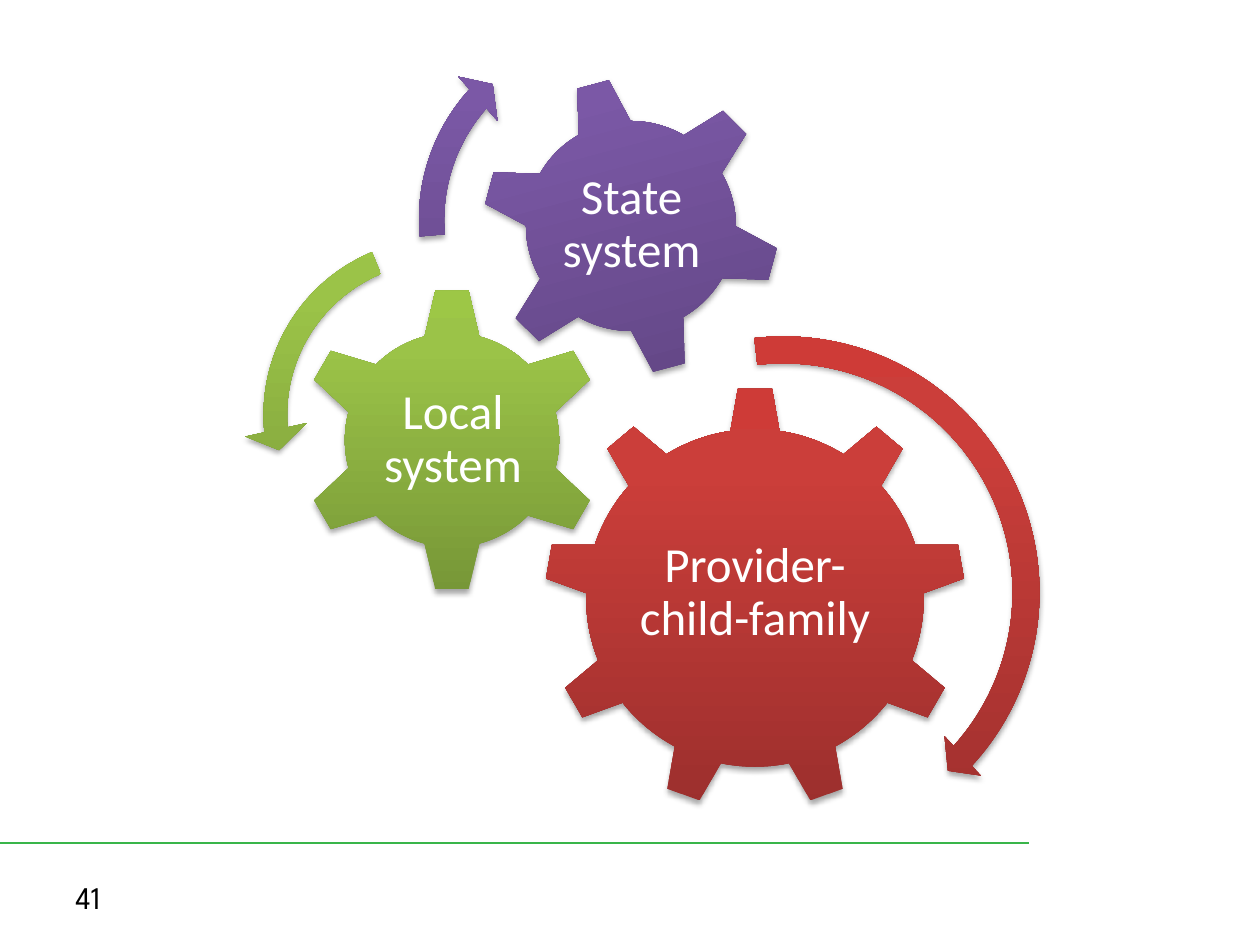
import copy

import pptx
import pptx.dml.color
import pptx.enum.shapes
import pptx.enum.text
import pptx.oxml
import pptx.oxml.ns
import pptx.oxml.xmlchemy
import pptx.util

EMU_PER_PX = 914400 / 126
SHAPES = pptx.enum.shapes.MSO_SHAPE
ALIGN = pptx.enum.text.PP_ALIGN

# Gradient colours from bottom to top
RED = ("9C2F2D", "CB3E3A", "CE3B37")
GREEN = ("779737", "9BC348", "9DC746")
PURPLE = ("5F4480", "7B58A6", "7C57A8")
STOP_POSITIONS = (0, 0.8, 1)

# kind, left, top, size, rotation, colours, label, label box
GEARS = [
    (SHAPES.GEAR_9, 544, 387, 422, 0, RED, "Provider-child-family", (629, 485, 252, 217)),
    (SHAPES.GEAR_6, 299, 287, 306, 0, GREEN, "Local system", (377, 365, 152, 151)),
    (SHAPES.GEAR_6, 481, 76, 300, 345, PURPLE, "State system", (547, 141, 169, 169)),
]
# kind, left, top, size, colours, adjustments
ARROWS = [
    (SHAPES.CIRCULAR_ARROW, 514, 323, 539, RED, (0.05, 2.99, 25.41, 158.08, 0.05)),
    (SHAPES.LEFT_CIRCULAR_ARROW, 244, 219, 392, GREEN, (0.06, 4.3, 104.89, 148.38, 0.08)),
    (SHAPES.CIRCULAR_ARROW, 402, 9, 422, PURPLE, (0.06, 3.94, 133.14, 105.08, 0.07)),
]
SHADOW = (
    '<a:outerShdw %s blurRad="40000" dist="23000" dir="5400000" rotWithShape="0">'
    '<a:srgbClr val="000000"><a:alpha val="35000"/></a:srgbClr></a:outerShdw>'
    % pptx.oxml.ns.nsdecls("a")
)


def px(*lengths):
    return [pptx.util.Emu(round(length * EMU_PER_PX)) for length in lengths]


def colour(value):
    return pptx.dml.color.RGBColor.from_string(value)


def fill_gradient(shape, colours):
    shape.fill.gradient()
    shape.fill.gradient_angle = 90
    stop_list = next(shape._element.spPr.iter(pptx.oxml.ns.qn("a:gsLst")))
    stop_list.append(copy.deepcopy(stop_list[0]))
    for stop, value, position in zip(shape.fill.gradient_stops, colours, STOP_POSITIONS):
        stop.color.rgb = colour(value)
        stop.position = position


def add_part(page, kind, left, top, size, colours):
    """Add a square, gradient-filled shape with a soft shadow below it."""
    shape = page.shapes.add_shape(kind, *px(left, top, size, size))
    fill_gradient(shape, colours)
    shape.line.fill.background()
    shape.shadow.inherit = False
    effects = shape._element.spPr.find(pptx.oxml.ns.qn("a:effectLst"))
    effects.append(pptx.oxml.parse_xml(SHADOW))
    return shape


def add_text(page, bounds, text, font, size, value):
    box = page.shapes.add_textbox(*px(*bounds))
    box.text_frame.word_wrap = True
    box.text_frame.vertical_anchor = pptx.enum.text.MSO_ANCHOR.MIDDLE
    para = box.text_frame.paragraphs[0]
    para.text = text
    para.font.name = font
    para.font.size = pptx.util.Pt(size)
    para.font.color.rgb = colour(value)
    return box


def add_gear_label(page, bounds, text):
    frame = add_text(page, bounds, text, "Calibri", 28, "FFFFFF").text_frame
    inset = px(5)[0]
    frame.margin_left = frame.margin_right = inset
    frame.margin_top = frame.margin_bottom = inset
    frame.paragraphs[0].alignment = ALIGN.CENTER
    frame.paragraphs[0].line_spacing = 0.9


def add_footer_rule(page):
    rule = page.shapes.add_connector(
        pptx.enum.shapes.MSO_CONNECTOR.STRAIGHT, *px(0, 843, 1029, 843))
    rule.line.color.rgb = colour("39B54A")
    rule.line.width = pptx.util.Pt(1.5)
    rule._element.spPr.append(pptx.oxml.xmlchemy.OxmlElement("a:effectLst"))


def main():
    deck = pptx.Presentation()
    deck.slide_width, deck.slide_height = px(1260, 945)
    page = deck.slides.add_slide(deck.slide_layouts[6])

    add_footer_rule(page)
    add_text(page, (63, 872, 294, 50), "41", "League Spartan", 18, "000000")
    for kind, left, top, size, rotation, colours, label, bounds in GEARS:
        gear = add_part(page, kind, left, top, size, colours)
        gear.rotation = rotation
        add_gear_label(page, bounds, label)
    for kind, left, top, size, colours, adjustments in ARROWS:
        arrow = add_part(page, kind, left, top, size, colours)
        for index, adjustment in enumerate(adjustments):
            arrow.adjustments[index] = adjustment

    deck.save("out.pptx")


if __name__ == "__main__":
    main()
